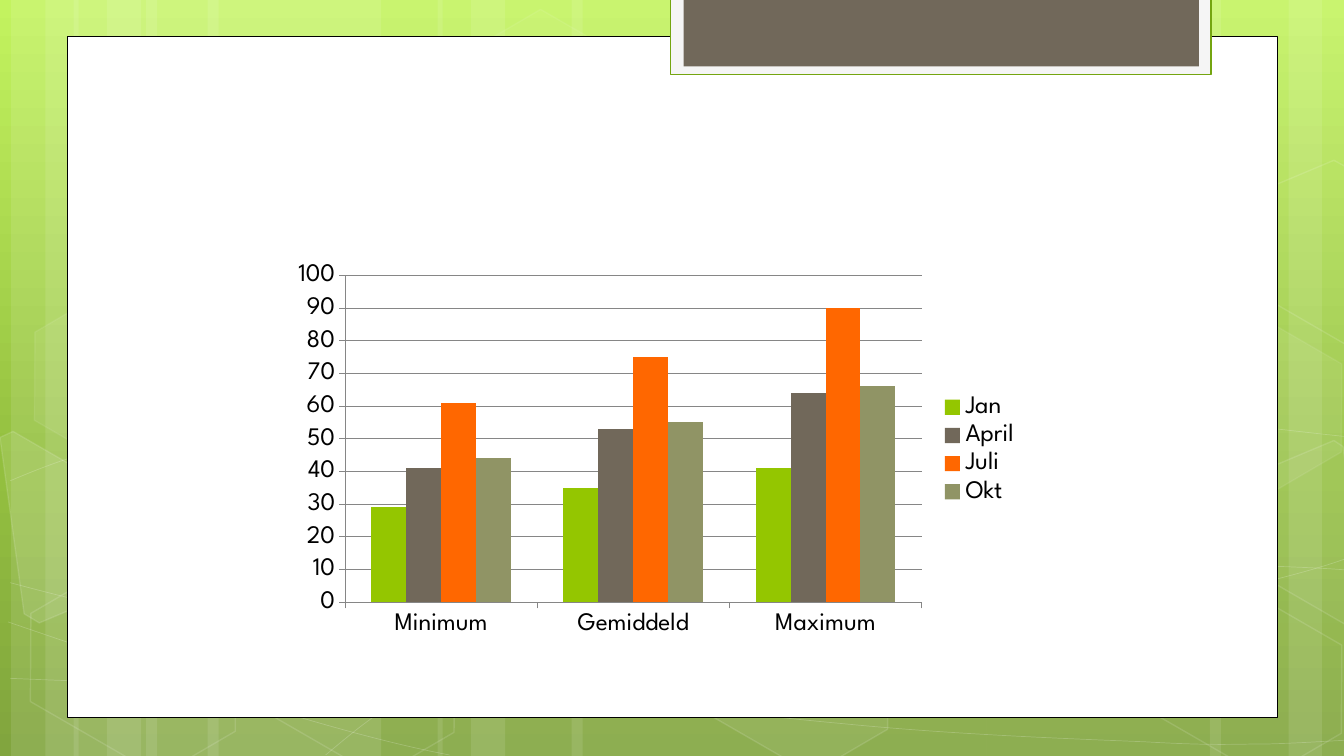
from copy import deepcopy

from pptx import Presentation
from pptx.chart.data import CategoryChartData
from pptx.dml.color import RGBColor
from pptx.enum.chart import XL_CHART_TYPE, XL_LEGEND_POSITION, XL_TICK_MARK
from pptx.enum.shapes import MSO_SHAPE
from pptx.oxml.ns import qn
from pptx.oxml.xmlchemy import OxmlElement
from pptx.util import Inches, Pt

RECTANGLE, HEXAGON = MSO_SHAPE.RECTANGLE, MSO_SHAPE.HEXAGON
COLUMNS, LEGEND_RIGHT = XL_CHART_TYPE.COLUMN_CLUSTERED, XL_LEGEND_POSITION.RIGHT
TICK_OUT, TICK_NONE = XL_TICK_MARK.OUTSIDE, XL_TICK_MARK.NONE
WIDTH, HEIGHT = 13.33, 7.5
FONT, WHITE = "League Spartan", "FFFFFF"

# Chart content
CATEGORIES = ["Minimum", "Gemiddeld", "Maximum"]
SERIES = [
    ("Jan", (29, 35, 41), "94C600"),
    ("April", (41, 53, 64), "71685A"),
    ("Juli", (61, 75, 90), "FF6700"),
    ("Okt", (44, 55, 66), "909465"),
]
CHART_BOX = (2.81, 2.54, 7.41, 3.84)

# Backdrop: gradient stops, then stripes as (left, width)
GRADIENT = [(0, "C3F35F"), (0.62, "93BF3F"), (1, "81A53E")]
STRIPES = [
    (1.45, 2.33), (0.11, 0.67), (0.45, 1.11), (2.06, 2.33), (0.73, 0.67), (1.06, 1.11),
    (9.78, 2.33), (12.78, 0.67), (12, 1.11), (5.67, 4.11), (4.34, 0.67), (4.67, 1.11),
]
# Each curve: a start point, then two control points and an end point per piece
CURVES = [
    [(0.1, 6.73), (0.82, 6.76), (1.54, 6.79), (2.54, 6.78), (3.54, 6.77), (4.77, 6.75),
     (6.1, 6.65), (7.44, 6.55), (9.33, 6.36), (10.55, 6.17), (11.78, 5.98), (13.03, 5.68),
     (13.43, 5.51)],
    [(0.1, 4.77), (0.48, 4.61), (0.86, 4.46), (1.62, 4.31), (2.38, 4.16), (3.45, 3.94),
     (4.63, 3.87), (5.82, 3.8), (7.25, 3.79), (8.72, 3.87), (10.19, 3.95), (12.63, 4.26),
     (13.43, 4.34)],
    [(0.08, 6.17), (1.69, 6.72), (3.3, 7.27), (4.46, 7.49)],
    [(0.1, 5.78), (0.51, 5.89), (0.93, 6), (1.71, 6.16), (2.48, 6.31), (3.64, 6.56),
     (4.75, 6.73), (5.86, 6.9), (7.27, 7.08), (8.37, 7.18), (9.48, 7.29), (10.66, 7.33),
     (11.37, 7.36), (12.07, 7.4), (12.25, 7.38), (12.6, 7.38), (12.94, 7.37), (13.19, 7.35),
     (13.43, 7.34)],
    [(3.23, 7.49), (3.47, 7.29), (3.7, 7.09), (4.03, 6.91), (4.35, 6.73), (4.8, 6.53),
     (5.17, 6.39), (5.54, 6.25), (5.77, 6.19), (6.26, 6.09), (6.75, 5.99), (7.65, 5.85),
     (8.11, 5.78), (8.58, 5.71), (8.65, 5.71), (9.07, 5.69), (9.48, 5.66), (10.13, 5.63),
     (10.59, 5.62), (11.05, 5.61), (11.82, 5.62), (11.82, 5.62), (12.1, 5.62), (12.4, 5.62),
     (12.7, 5.62), (12.95, 5.63), (13.17, 5.64), (13.29, 5.65), (13.41, 5.66), (13.37, 5.65),
     (13.41, 5.66)],
]
# Hexagons: left, top, fill opacity, line opacity (percent)
HEXAGONS = [
    (4.45, 0.36, 4, 8), (6.62, 5.89, 6, 12), (0.15, 5.91, None, 12), (0.19, 3.12, 7, 8),
    (2.32, 5.92, None, 12), (11.12, 5.93, None, 12), (11.12, 3.14, 7, 8),
]
# Hexagons cut by the slide's edge: points, fill opacity
CUT_HEXAGONS = [
    ([(0, 4.34), (0.13, 4.28), (1.15, 4.87), (1.27, 5.81), (0.39, 6.18), (0.24, 6.09)], 10),
    ([(12.35, 4.74), (13.23, 4.37), (13.32, 4.43), (13.57, 6.25), (13.49, 6.28),
      (12.47, 5.69)], 4),
    ([(12.35, 1.96), (13.23, 1.59), (13.34, 1.65), (13.57, 3.46), (13.49, 3.5),
      (12.47, 2.91)], None),
]
# Panels: left, top, width, height, fill, line, line width
PANELS = [
    (0.67, 0.36, 12, 6.76, WHITE, "000000", 0.5),
    (6.65, -0.02, 5.36, 0.76, "F5F5F5", "74A510", 1.25),
    (6.78, -0.02, 5.11, 0.68, "71685A", None, 0),
]


def rgb(value):
    return RGBColor.from_string(value)


def paint(fill, parent, color, opacity):
    """Fill with a colour; parent is the XML element that holds the fill."""
    if color is None or opacity is None:
        fill.background()
        return
    fill.solid()
    fill.fore_color.rgb = rgb(color)
    if opacity < 100:
        alpha = OxmlElement("a:alpha")
        alpha.set("val", str(opacity * 1000))
        parent.find(f"{qn('a:solidFill')}/{qn('a:srgbClr')}").append(alpha)


def style(shape, fill, fill_opacity, line=None, line_opacity=100, line_width=1):
    shape.shadow.inherit = False
    properties = shape._element.spPr
    paint(shape.fill, properties, fill, fill_opacity)
    shape.line.width = Pt(line_width)
    paint(shape.line.fill, properties.find(qn("a:ln")), line, line_opacity)


def add_preset(slide, kind, *box):
    return slide.shapes.add_shape(kind, *map(Inches, box))


def add_outline(slide, points, close):
    points = [(Inches(x), Inches(y)) for x, y in points]
    builder = slide.shapes.build_freeform(*points[0])
    builder.add_line_segments(points[1:], close=close)
    return builder.convert_to_shape()


def add_curve(slide, points):
    """Turn every three line segments of an outline into one Bézier piece."""
    shape = add_outline(slide, points, False)
    segments = list(shape._element.iter(qn("a:lnTo")))
    for start in range(0, len(segments), 3):
        piece = OxmlElement("a:cubicBezTo")
        segments[start].addprevious(piece)
        for segment in segments[start:start + 3]:
            piece.append(segment[0])
            segment.getparent().remove(segment)
    return shape


def add_backdrop(slide):
    # Gradient
    fill = slide.background.fill
    fill.gradient()
    fill.gradient_angle = 270
    stop_list = slide._element.find(f".//{qn('a:gsLst')}")
    stop_list.append(deepcopy(stop_list[0]))
    for stop, (position, color) in zip(fill.gradient_stops, GRADIENT):
        stop.position = position
        stop.color.rgb = rgb(color)
    # Stripes, curves and hexagons
    for left, width in STRIPES:
        style(add_preset(slide, RECTANGLE, left, 0, width, HEIGHT), WHITE, 10)
    for curve in CURVES:
        style(add_curve(slide, curve), None, None, WHITE, 20, 0.5)
    for left, top, fill_opacity, line_opacity in HEXAGONS:
        hexagon = add_preset(slide, HEXAGON, left, top, 2.34, 1.52)
        hexagon.rotation = 30
        hexagon.adjustments[0], hexagon.adjustments[1] = 0.285, 1.155
        style(hexagon, WHITE, fill_opacity, WHITE, line_opacity)
    for points, fill_opacity in CUT_HEXAGONS:
        style(add_outline(slide, points, True), WHITE, fill_opacity, WHITE, 12)


def add_column_chart(slide):
    data = CategoryChartData()
    data.categories = CATEGORIES
    for name, values, _ in SERIES:
        data.add_series(name, values)
    chart = slide.shapes.add_chart(COLUMNS, *map(Inches, CHART_BOX), data).chart
    chart.font.name, chart.font.size = FONT, Pt(18)
    chart.font.color.rgb = rgb("000000")
    chart.has_title = False
    chart.has_legend = True
    chart.legend.position = LEGEND_RIGHT
    chart.legend.include_in_layout = False
    plot = chart.plots[0]
    plot.gap_width, plot.overlap = 150, 0
    plot.vary_by_categories = False
    for series, (_, _, color) in zip(plot.series, SERIES):
        series.format.fill.solid()
        series.format.fill.fore_color.rgb = rgb(color)
    chart.value_axis.has_major_gridlines = True
    for axis in (chart.category_axis, chart.value_axis):
        axis.major_tick_mark, axis.minor_tick_mark = TICK_OUT, TICK_NONE
    for part in (chart.category_axis, chart.value_axis, chart.value_axis.major_gridlines):
        part.format.line.color.rgb = rgb("868686")
        part.format.line.width = Pt(0.75)


def main():
    presentation = Presentation()
    presentation.slide_width, presentation.slide_height = Inches(WIDTH), Inches(HEIGHT)
    slide = presentation.slides.add_slide(presentation.slide_layouts[6])
    add_backdrop(slide)
    for *box, fill, line, line_width in PANELS:
        style(add_preset(slide, RECTANGLE, *box), fill, 100, line, 100, line_width)
    add_column_chart(slide)
    presentation.save("out.pptx")


if __name__ == "__main__":
    main()
